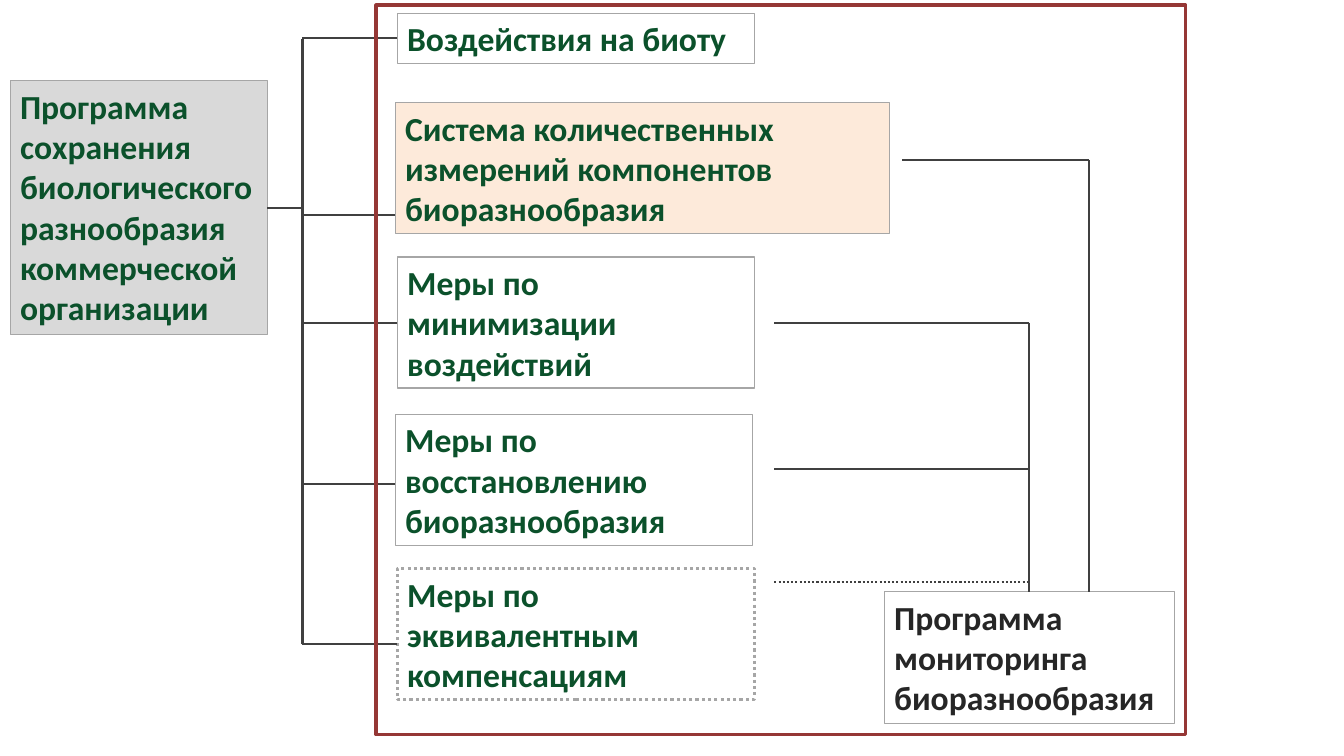
from dataclasses import dataclass
from typing import NamedTuple

from lxml.etree import SubElement
from pptx import Presentation
from pptx.dml.color import RGBColor
from pptx.enum.dml import MSO_LINE
from pptx.enum.shapes import MSO_CONNECTOR, MSO_SHAPE
from pptx.enum.text import MSO_ANCHOR, MSO_AUTO_SIZE, PP_ALIGN
from pptx.oxml.ns import qn
from pptx.util import Emu, Pt

PX = 9144  # EMU per px, 100 px to the inch
TOP, LEFT, RIGHT = 0, 1, 3


@dataclass(frozen=True)
class Theme:
    font: str = "Calibri"
    text_size: int = 24
    green: str = "0B512B"
    dark: str = "262626"
    wire: str = "404040"
    border: str = "A6A6A6"
    frame: str = "953735"
    grey_fill: str = "D9D9D9"
    peach_fill: str = "FDEADA"


class Box(NamedTuple):
    left: int
    top: int
    width: int
    height: int


THEME = Theme()


def px(length):
    return Emu(length * PX)


def style_line(line, color, weight, dotted=False):
    line.color.rgb = RGBColor.from_string(color)
    line.width = Pt(weight)
    if dotted:
        line.dash_style = MSO_LINE.ROUND_DOT


def add_panel(slide, box, fill=None, border=THEME.border, weight=0.75, dotted=False):
    panel = slide.shapes.add_shape(MSO_SHAPE.RECTANGLE, *map(px, box))
    panel.shadow.inherit = False
    if fill:
        panel.fill.solid()
        panel.fill.fore_color.rgb = RGBColor.from_string(fill)
    else:
        panel.fill.background()
    style_line(panel.line, border, weight, dotted)
    return panel


def add_label(slide, box, text, color=THEME.green, **look):
    label = add_panel(slide, box, **look)
    frame = label.text_frame
    frame.text = text
    frame.word_wrap = True
    frame.auto_size = MSO_AUTO_SIZE.SHAPE_TO_FIT_TEXT
    frame.vertical_anchor = MSO_ANCHOR.TOP
    paragraph = frame.paragraphs[0]
    paragraph.alignment = PP_ALIGN.LEFT
    font = paragraph.runs[0].font
    font.name, font.size, font.bold = THEME.font, Pt(THEME.text_size), True
    font.color.rgb = RGBColor.from_string(color)
    return label


def add_wire(slide, start, end, dotted=False):
    wire = slide.shapes.add_connector(MSO_CONNECTOR.STRAIGHT, *map(px, (*start, *end)))
    style_line(wire.line, THEME.wire, 1.5, dotted)
    SubElement(wire._element.spPr, qn("a:effectLst"))
    return wire


# Conservation programme with the trunk that feeds the measures
def build_programme(slide, box):
    programme = add_label(
        slide, box,
        "Программа сохранения биологического разнообразия коммерческой организации",
        fill=THEME.grey_fill)
    trunk_x = box.left + 290
    root_y = box.top + box.height // 2
    root = add_wire(slide, (trunk_x, root_y), (box.left + box.width, root_y))
    root.end_connect(programme, RIGHT)
    add_wire(slide, (trunk_x, box.top + 559), (trunk_x, box.top - 41))
    return trunk_x


# Framed column of measures, each with its branch from the trunk
def build_measures(slide, box, trunk_x):
    near, far = box.left + 19, box.left + 21
    # text, left, top, width, height, branch below top, look
    measures = [
        ("Воздействия на биоту", far, 8, 354, 50, 25, {}),
        ("Система количественных измерений компонентов биоразнообразия",
         near, 97, 490, 130, 111, {"fill": THEME.peach_fill}),
        ("Меры по минимизации воздействий", far, 250, 354, 130, 65, {}),
        ("Меры по восстановлению биоразнообразия", near, 406, 354, 130, 69, {}),
        ("Меры по эквивалентным компенсациям", far, 559, 354, 130, 75,
         {"weight": 2.25, "dotted": True}),
    ]
    for text, left, top, width, height, drop, look in measures:
        place = Box(left, box.top + top, width, height)
        measure = add_label(slide, place, text, **look)
        branch_y = place.top + drop
        branch = add_wire(slide, (left, branch_y), (trunk_x, branch_y))
        if drop * 2 == height:
            branch.begin_connect(measure, LEFT)
    add_panel(slide, box, border=THEME.frame, weight=2.25)


# Monitoring programme with the wires that gather above it
def build_monitoring(slide, box):
    monitoring = add_label(slide, box, "Программа мониторинга биоразнообразия",
                           color=THEME.dark, weight=0.5)
    # Measures gather into the middle of the box
    middle = box.left + box.width // 2
    for rise, dotted in ((267, False), (122, False), (10, True)):
        y = box.top - rise
        add_wire(slide, (middle - 253, y), (middle, y), dotted)
    gather = add_wire(slide, (middle, box.top - 267), (middle, box.top))
    gather.end_connect(monitoring, TOP)
    # The measurement system has its own path
    system_x, system_y = middle + 59, box.top - 428
    add_wire(slide, (system_x - 185, system_y), (system_x, system_y))
    add_wire(slide, (system_x, system_y), (system_x, box.top))


def main():
    deck = Presentation()
    deck.slide_width, deck.slide_height = px(1333), px(750)
    slide = deck.slides.add_slide(deck.slide_layouts.get_by_name("Blank"))
    trunk_x = build_programme(slide, Box(10, 80, 255, 252))
    build_measures(slide, Box(373, 5, 803, 724), trunk_x)
    build_monitoring(slide, Box(877, 587, 288, 131))
    deck.save("out.pptx")


if __name__ == "__main__":
    main()
